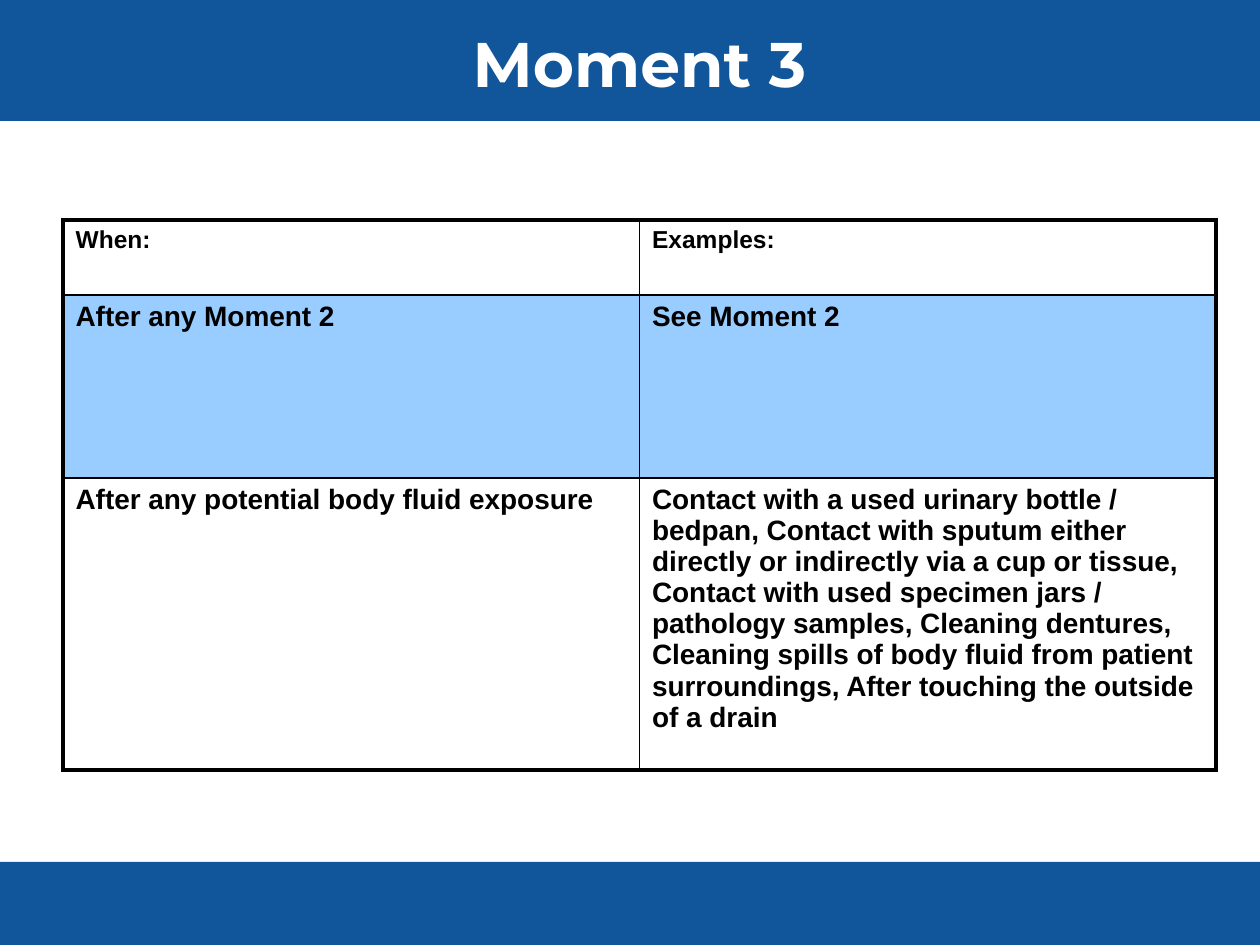
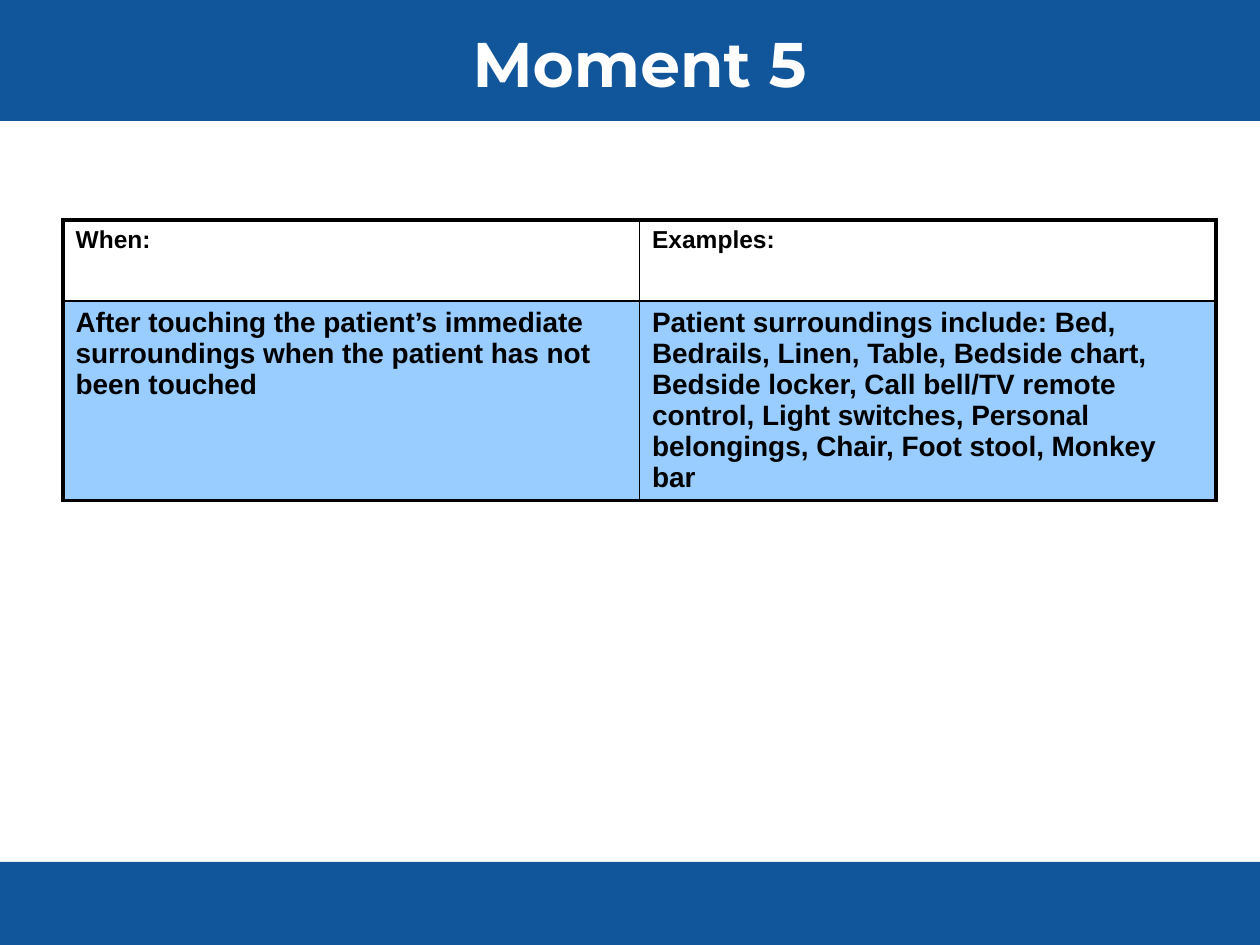
import lxml.etree
import pptx
import pptx.dml.color
import pptx.enum.shapes
import pptx.enum.text
import pptx.oxml.ns
import pptx.util

PX = 914400 // 126  # EMU in one px
SLIDE_WIDTH, SLIDE_HEIGHT = 1260, 945
HEADER_HEIGHT, FOOTER_HEIGHT = 121, 83
CONTENT_LEFT, CONTENT_WIDTH = 63, 1153
TITLE_HEIGHT, TABLE_TOP = 125, 220

BLUE = pptx.dml.color.RGBColor(0x11, 0x55, 0x9A)
LIGHT_BLUE = pptx.dml.color.RGBColor(0x99, 0xCC, 0xFF)
WHITE = pptx.dml.color.RGBColor(0xFF, 0xFF, 0xFF)
BLACK = pptx.dml.color.RGBColor(0x00, 0x00, 0x00)

TITLE_FONT, TABLE_FONT = "Montserrat", "Arial"
OUTER_LINE, INNER_LINE = 2.25, 1

HEADINGS = ("When:", "Examples:")
MOMENT_3 = [
    HEADINGS,
    ("After any Moment 2", "See Moment 2"),
    ("After any potential body fluid exposure",
     "Contact with a used urinary bottle / bedpan, Contact with sputum either "
     "directly or indirectly via a cup or tissue, Contact with used specimen "
     "jars / pathology samples, Cleaning dentures, Cleaning spills of body "
     "fluid from patient surroundings, After touching the outside of a drain"),
]
MOMENT_5 = [
    HEADINGS,
    ("After touching the patient’s immediate surroundings when the patient "
     "has not been touched",
     "Patient surroundings include: Bed, Bedrails, Linen, Table, Bedside "
     "chart, Bedside locker, Call bell/TV remote control, Light switches, "
     "Personal belongings, Chair, Foot stool, Monkey bar"),
]


def px(*lengths):
    return [pptx.util.Emu(length * PX) for length in lengths]


def add_span(para, text, font, size, color):
    span = para.add_run()
    span.text = text
    span.font.name = font
    span.font.size = pptx.util.Pt(size)
    span.font.bold = True
    span.font.color.rgb = color


def add_band(page, top, height):
    """Full-width blue band, placed behind the title."""
    band = page.shapes.add_shape(
        pptx.enum.shapes.MSO_SHAPE.RECTANGLE, *px(0, top, SLIDE_WIDTH, height))
    band.shadow.inherit = False
    band.fill.solid()
    band.fill.fore_color.rgb = BLUE
    band.line.fill.background()
    page.shapes.title.element.addprevious(band.element)


def set_title(page, text):
    title = page.shapes.title
    title.left, title.top, title.width, title.height = px(
        CONTENT_LEFT, 0, CONTENT_WIDTH, TITLE_HEIGHT)
    frame = title.text_frame
    frame.auto_size = pptx.enum.text.MSO_AUTO_SIZE.NONE
    frame.vertical_anchor = pptx.enum.text.MSO_ANCHOR.MIDDLE
    para = frame.paragraphs[0]
    para.alignment = pptx.enum.text.PP_ALIGN.CENTER
    add_span(para, text, TITLE_FONT, 36, WHITE)


def add_page(deck, title):
    page = deck.slides.add_slide(deck.slide_layouts.get_by_name("Title Only"))
    set_title(page, title)
    add_band(page, SLIDE_HEIGHT - FOOTER_HEIGHT, FOOTER_HEIGHT)
    add_band(page, 0, HEADER_HEIGHT)
    return page


def set_borders(cell, outer_sides):
    """Thick lines on the table's edge, thin lines inside."""
    properties = cell._tc.get_or_add_tcPr()
    qn = pptx.oxml.ns.qn
    for side in "LRTB":
        width = OUTER_LINE if side in outer_sides else INNER_LINE
        line = lxml.etree.SubElement(
            properties, qn(f"a:ln{side}"), w=str(pptx.util.Pt(width)))
        fill = lxml.etree.SubElement(line, qn("a:solidFill"))
        lxml.etree.SubElement(fill, qn("a:srgbClr"), val=str(BLACK))


def add_moment_table(page, rows, heights):
    columns = len(HEADINGS)
    table = page.shapes.add_table(
        len(rows), columns,
        *px(CONTENT_LEFT, TABLE_TOP, CONTENT_WIDTH, sum(heights))).table
    table.first_row = table.horz_banding = False
    for row, height in zip(table.rows, heights):
        row.height = px(height)[0]
    for row_index, texts in enumerate(rows):
        for column_index, text in enumerate(texts):
            cell = table.cell(row_index, column_index)
            edges = {"L": column_index == 0, "R": column_index == columns - 1,
                     "T": row_index == 0, "B": row_index == len(rows) - 1}
            set_borders(cell, [side for side, outer in edges.items() if outer])
            # Every second row is shaded
            if row_index % 2:
                cell.fill.solid()
                cell.fill.fore_color.rgb = LIGHT_BLUE
            else:
                cell.fill.background()
            size = 16 if row_index else 14
            add_span(cell.text_frame.paragraphs[0], text, TABLE_FONT, size, BLACK)


def main():
    deck = pptx.Presentation()
    deck.slide_width, deck.slide_height = px(SLIDE_WIDTH, SLIDE_HEIGHT)

    # Moment 3
    page = add_page(deck, "Moment 3")
    add_moment_table(page, MOMENT_3, [75, 183, 292])

    # Moment 5
    page = add_page(deck, "Moment 5")
    add_moment_table(page, MOMENT_5, [81, 199])

    deck.save("out.pptx")


if __name__ == "__main__":
    main()
